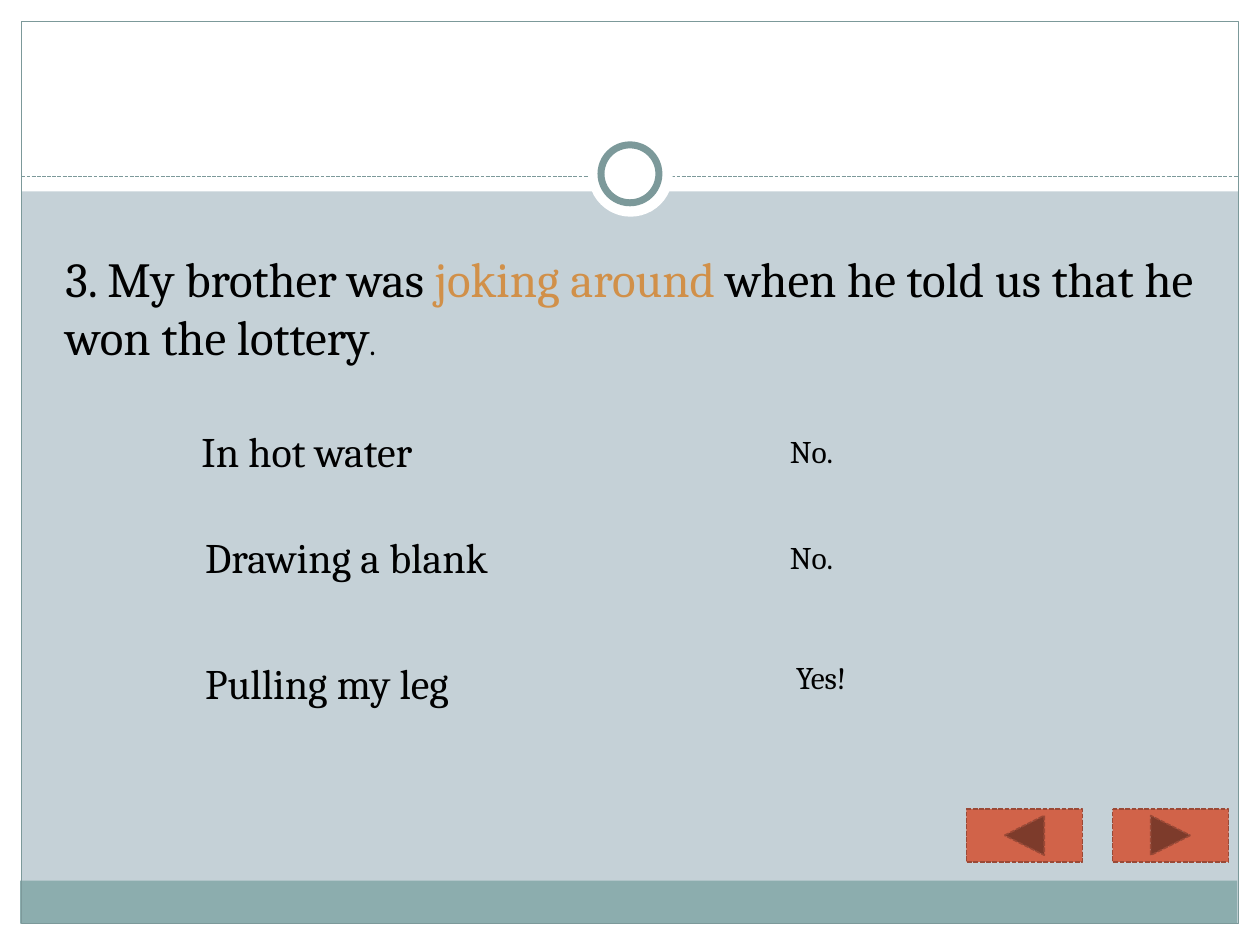
from pptx import Presentation
from pptx.dml.color import RGBColor
from pptx.enum.dml import MSO_LINE
from pptx.enum.shapes import MSO_CONNECTOR, MSO_SHAPE
from pptx.enum.text import MSO_AUTO_SIZE
from pptx.oxml.ns import qn
from pptx.util import Inches, Pt
from lxml.etree import SubElement

WHITE, BLACK, TEAL, RUST = "FFFFFF", "000000", "7C999A", "D16349"


def color(code):
    return RGBColor.from_string(code)


def stroke(line, code, width, dash=None):
    line.color.rgb = color(code)
    line.width = Pt(width)
    if dash:
        line.dash_style = dash


def add_box(slide, kind, left, top, width, height, fill=None, edge=None):
    """Add a preset shape; edge is (colour, points[, dash])."""
    box = slide.shapes.add_shape(
        kind, Inches(left), Inches(top), Inches(width), Inches(height))
    box.shadow.inherit = False
    if fill:
        box.fill.solid()
        box.fill.fore_color.rgb = color(fill)
    else:
        box.fill.background()
    if edge:
        stroke(box.line, *edge)
    else:
        box.line.fill.background()


def add_rule(slide, left, right, top):
    rule = slide.shapes.add_connector(
        MSO_CONNECTOR.STRAIGHT, Inches(left), Inches(top), Inches(right), Inches(top))
    stroke(rule.line, TEAL, 0.75, MSO_LINE.SQUARE_DOT)
    SubElement(rule._element.spPr, qn("a:effectLst"))


def add_run(para, text, size=24, code=BLACK, font="Cambria"):
    run = para.add_run()
    run.text = text
    run.font.name = font
    run.font.size = Pt(size)
    run.font.color.rgb = color(code)


def add_text(slide, left, top, width, height, *runs):
    """Add a text box; each run is (text, format)."""
    box = slide.shapes.add_textbox(
        Inches(left), Inches(top), Inches(width), Inches(height))
    frame = box.text_frame
    frame.word_wrap = True
    frame.auto_size = MSO_AUTO_SIZE.SHAPE_TO_FIT_TEXT
    for text, style in runs:
        add_run(frame.paragraphs[0], text, **style)


def add_frame(slide):
    rect, oval = MSO_SHAPE.RECTANGLE, MSO_SHAPE.OVAL
    for area in ((0, 7.33, 10, 0.17), (0, 0, 10, 1.52),
                 (0, 0, 0.17, 7.5), (9.83, 0, 0.17, 7.5)):
        add_box(slide, rect, *area, fill=WHITE)
    add_box(slide, rect, 0.16, 6.99, 9.66, 0.34, fill="8CADAE")
    add_box(slide, rect, 0.17, 0.17, 9.66, 7.16, edge=(TEAL, 0.75))
    add_rule(slide, 0.17, 9.83, 1.4)
    add_box(slide, oval, 4.67, 1.05, 0.67, 0.67, fill=WHITE)
    add_box(slide, oval, 4.77, 1.15, 0.46, 0.46, fill=WHITE, edge=(TEAL, 4))


def main():
    deck = Presentation()
    deck.slide_width, deck.slide_height = Inches(10), Inches(7.5)
    slide = deck.slides.add_slide(deck.slide_layouts[6])
    slide.background.fill.solid()
    slide.background.fill.fore_color.rgb = color("C5D1D7")
    add_frame(slide)

    add_text(slide, 0.42, 1.92, 9.25, 1.04,
             ("3. My brother was ", {"size": 28}),
             ("joking around ", {"size": 28, "code": "D19049"}),
             ("when he told us that he won the lottery", {"size": 28}),
             (".", {"size": 18}))
    choices = (("In hot water", 1.5, 3.33, 3.33),
               ("Drawing a blank", 1.53, 4.17, 2.67),
               ("Pulling my leg", 1.53, 5.17, 3.14))
    for text, left, top, width in choices:
        add_text(slide, left, top, width, 0.5, (text, {"size": 24}))
    replies = (("No.", 6.17, 3.38), ("No.", 6.17, 4.22), ("Yes!", 6.22, 5.17))
    for text, left, top in replies:
        add_text(slide, left, top, 2.33, 0.4, (text, {"size": 18}))

    buttons = ((MSO_SHAPE.ACTION_BUTTON_FORWARD_OR_NEXT, 8.83),
               (MSO_SHAPE.ACTION_BUTTON_BACK_OR_PREVIOUS, 7.67))
    for kind, left in buttons:
        add_box(slide, kind, left, 6.42, 0.92, 0.42, fill=RUST,
                edge=("9B4936", 0.9, MSO_LINE.SQUARE_DOT))
    deck.save("out.pptx")


if __name__ == "__main__":
    main()
